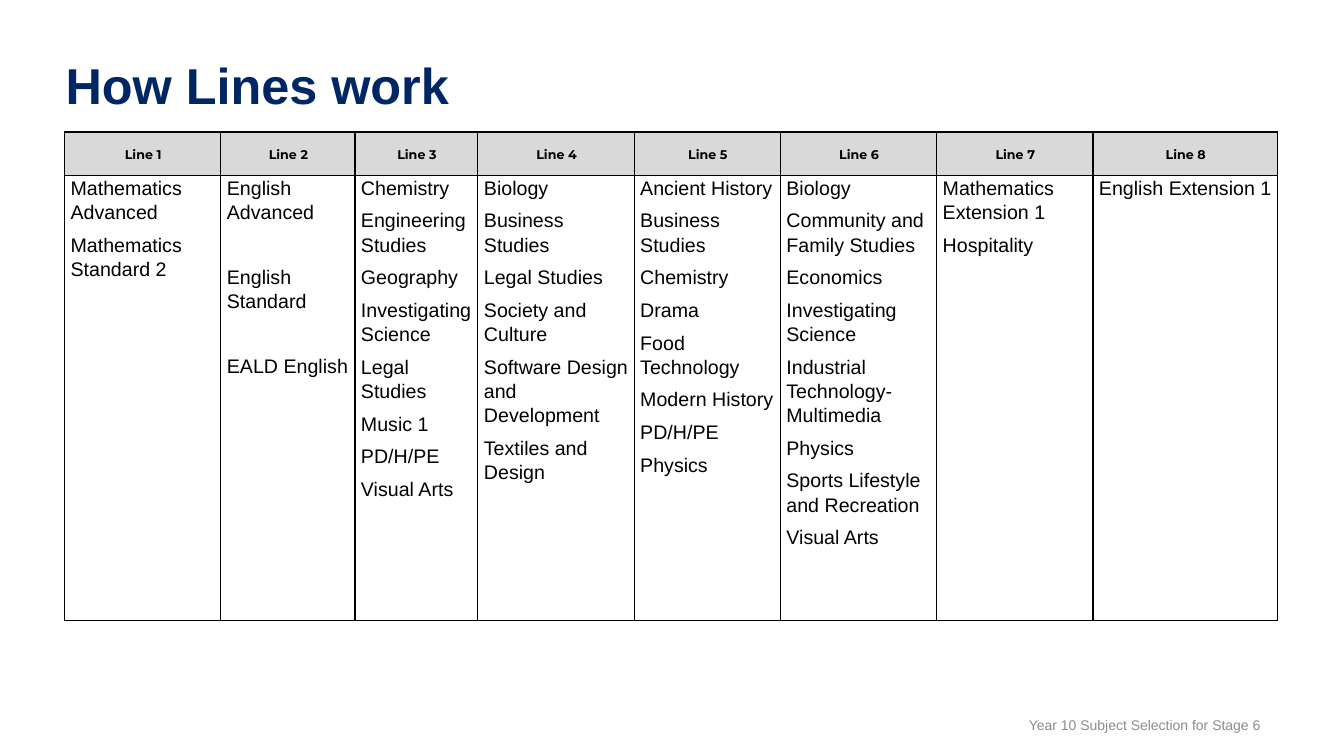
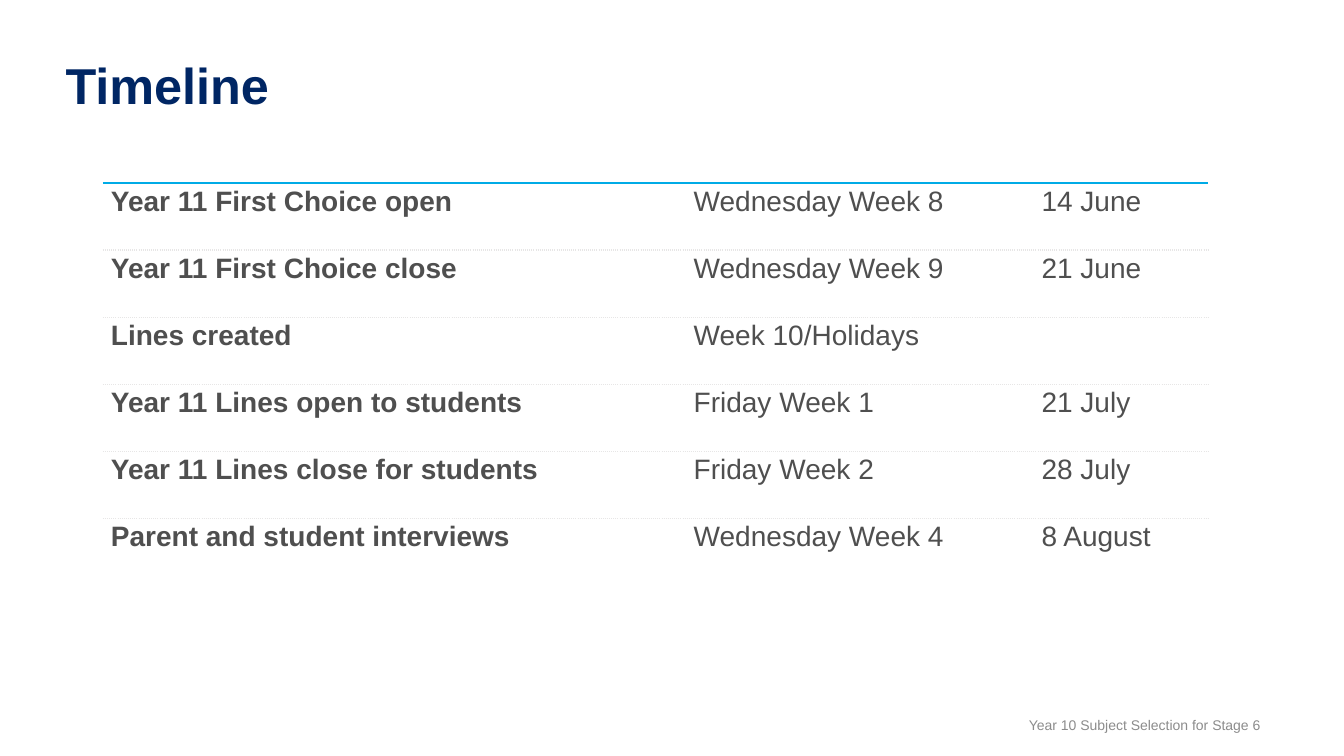
from lxml.etree import SubElement as Sub
from pptx import Presentation
from pptx.dml.color import RGBColor as Rgb
from pptx.enum.text import MSO_ANCHOR as Anchor, MSO_AUTO_SIZE as AutoSize, PP_ALIGN as Align
from pptx.oxml.ns import qn
from pptx.util import Emu, Pt

PX = 9144
SLIDE_BOX = (0, 0, 1333, 750)
TITLE_BOX = (65, 60, 1204, 55)
FOOTER_BOX = (800, 711, 450, 17)
LINES_BOX = (64, 131, 1203, 485)
TIMELINE_BOX = (102, 115, 1096, 466)
COLORS = {
    "navy": "002664",
    "footer": "8C8C8C",
    "black": "000000",
    "header": "D9D9D9",
    "body": "4F4F4F",
    "rule": "E7E6E6",
    "blue": "00ABE6",
}
EDGES = ("L", "R", "T", "B")
FOOTER = "Year 10 Subject Selection for Stage 6"
HEADER_HEIGHT = 43
LINE_WIDTHS = (155, 133, 122, 155, 145, 155, 155, 183)
LINES = (
    ("Mathematics Advanced", "Mathematics Standard 2"),
    ("English Advanced", "English Standard", "EALD English"),
    ("Chemistry", "Engineering Studies", "Geography", "Investigating Science",
     "Legal Studies", "Music 1", "PD/H/PE", "Visual Arts"),
    ("Biology", "Business Studies", "Legal Studies", "Society and Culture",
     "Software Design and Development", "Textiles and Design"),
    ("Ancient History", "Business Studies", "Chemistry", "Drama",
     "Food Technology", "Modern History", "PD/H/PE", "Physics"),
    ("Biology", "Community and Family Studies", "Economics",
     "Investigating Science", "Industrial Technology-Multimedia", "Physics",
     "Sports Lifestyle and Recreation", "Visual Arts"),
    ("Mathematics Extension 1", "Hospitality"),
    ("English Extension 1",),
)
WIDE_GAP_COLUMN = 1
TIMELINE_WIDTHS = (578, 345, 173)
TIMELINE = (
    ("Year 11 First Choice open", "Wednesday Week 8", "14 June"),
    ("Year 11 First Choice close", "Wednesday Week 9", "21 June"),
    ("Lines created", "Week 10/Holidays", ""),
    ("Year 11 Lines open to students", "Friday Week 1", "21 July"),
    ("Year 11 Lines close for students", "Friday Week 2", "28 July"),
    ("Parent and student interviews", "Wednesday Week 4", "8 August"),
)


def px(length):
    """Turn px into EMU."""
    return Emu(round(length * PX))


def rgb(name):
    """Look up a named colour."""
    return Rgb.from_string(COLORS[name])


def write(para, text, size, color, bold=False, font="Arial", align=Align.LEFT):
    """Add one styled run to a paragraph."""
    para.alignment = align
    span = para.add_run()
    span.text = text
    span.font.size = Pt(size)
    span.font.name = font
    span.font.bold = bold
    span.font.color.rgb = rgb(color)


def set_frame(frame, anchor):
    """Give a text frame no insets, wrapping and an anchor."""
    frame.margin_left = frame.margin_right = 0
    frame.margin_top = frame.margin_bottom = 0
    frame.word_wrap = True
    frame.auto_size = AutoSize.NONE
    frame.vertical_anchor = anchor


def add_page(deck, title):
    """Add a slide with the shared title and footer."""
    page = deck.slides.add_slide(deck.slide_layouts[5])
    box = page.shapes.title
    box.left, box.top, box.width, box.height = map(px, TITLE_BOX)
    set_frame(box.text_frame, Anchor.TOP)
    para = box.text_frame.paragraphs[0]
    para.line_spacing = 0.9
    write(para, title, 36, "navy", True)

    footer = page.shapes.add_textbox(*map(px, FOOTER_BOX))
    set_frame(footer.text_frame, Anchor.BOTTOM)
    write(footer.text_frame.paragraphs[0], FOOTER, 10, "footer", align=Align.RIGHT)
    return page


def add_grid(page, box, widths, heights):
    """Add an unstyled table with the given columns and rows."""
    frame = page.shapes.add_table(len(heights), len(widths), *map(px, box))
    table = frame.table
    table.first_row = table.horz_banding = False
    for column, width in zip(table.columns, widths):
        column.width = px(width)
    for row, height in zip(table.rows, heights):
        row.height = px(height)
    return table


def set_borders(cell, borders):
    """Draw the given edges as (colour, points, dash) and hide the others."""
    props = cell._tc.get_or_add_tcPr()
    for edge in EDGES:
        color, points, dash = borders.get(edge, (None, 0, None))
        line = Sub(props, qn(f"a:ln{edge}"), w=str(Pt(points)))
        if color is None:
            Sub(line, qn("a:noFill"))
            continue
        fill = Sub(line, qn("a:solidFill"))
        Sub(fill, qn("a:srgbClr"), val=COLORS[color])
        Sub(line, qn("a:prstDash"), val=dash)


def fill_cell(cell, texts, borders, insets, gap=6, fill=None, anchor=Anchor.TOP, **style):
    """Format a cell and write one paragraph for each text."""
    set_borders(cell, borders)
    if fill:
        cell.fill.solid()
        cell.fill.fore_color.rgb = rgb(fill)
    else:
        cell.fill.background()
    cell.margin_left, cell.margin_right = map(px, insets)
    cell.margin_top = cell.margin_bottom = 0
    cell.vertical_anchor = anchor
    frame = cell.text_frame
    for index, text in enumerate(texts):
        para = frame.add_paragraph() if index else frame.paragraphs[0]
        para.line_spacing = 1.1
        para.space_after = Pt(gap)
        write(para, text, **style)


def add_lines_table(page, box):
    """Place the subject lines, one column each."""
    heights = (HEADER_HEIGHT, box[3] - HEADER_HEIGHT)
    table = add_grid(page, box, LINE_WIDTHS, heights)
    borders = dict.fromkeys(EDGES, ("black", 1, "solid"))
    insets = (6, 5)
    for index, subjects in enumerate(LINES):
        fill_cell(table.cell(0, index), [f"Line {index + 1}"], borders, insets,
                  fill="header", anchor=Anchor.MIDDLE, size=9, color="black",
                  bold=True, font="Montserrat", align=Align.CENTER)
        gap = 29 if index == WIDE_GAP_COLUMN else 6
        fill_cell(table.cell(1, index), subjects, borders, insets, gap,
                  size=14, color="black")


def add_timeline_table(page, box):
    """Place the dated steps between dotted rules, under an open heading row."""
    count = len(TIMELINE) + 1
    table = add_grid(page, box, TIMELINE_WIDTHS, [box[3] / count] * count)
    rule = ("rule", 1, "sysDot")
    insets = (8, 7)
    last = len(TIMELINE_WIDTHS) - 1
    table.cell(0, 0).merge(table.cell(0, last))
    for column in range(last + 1):
        fill_cell(table.cell(0, column), [], {"B": ("blue", 2, "solid")}, insets)
    for row, step in enumerate(TIMELINE, 1):
        borders = {"T": rule}
        if row < count - 1:
            borders["B"] = rule
        for column, text in enumerate(step):
            fill_cell(table.cell(row, column), [text] if text else [], borders, insets,
                      size=20, color="body", bold=column == 0)


def main():
    """Build and save the deck."""
    deck = Presentation()
    deck.slide_width, deck.slide_height = map(px, SLIDE_BOX[2:])
    add_lines_table(add_page(deck, "How Lines work"), LINES_BOX)
    add_timeline_table(add_page(deck, "Timeline"), TIMELINE_BOX)
    deck.save("out.pptx")


if __name__ == "__main__":
    main()
